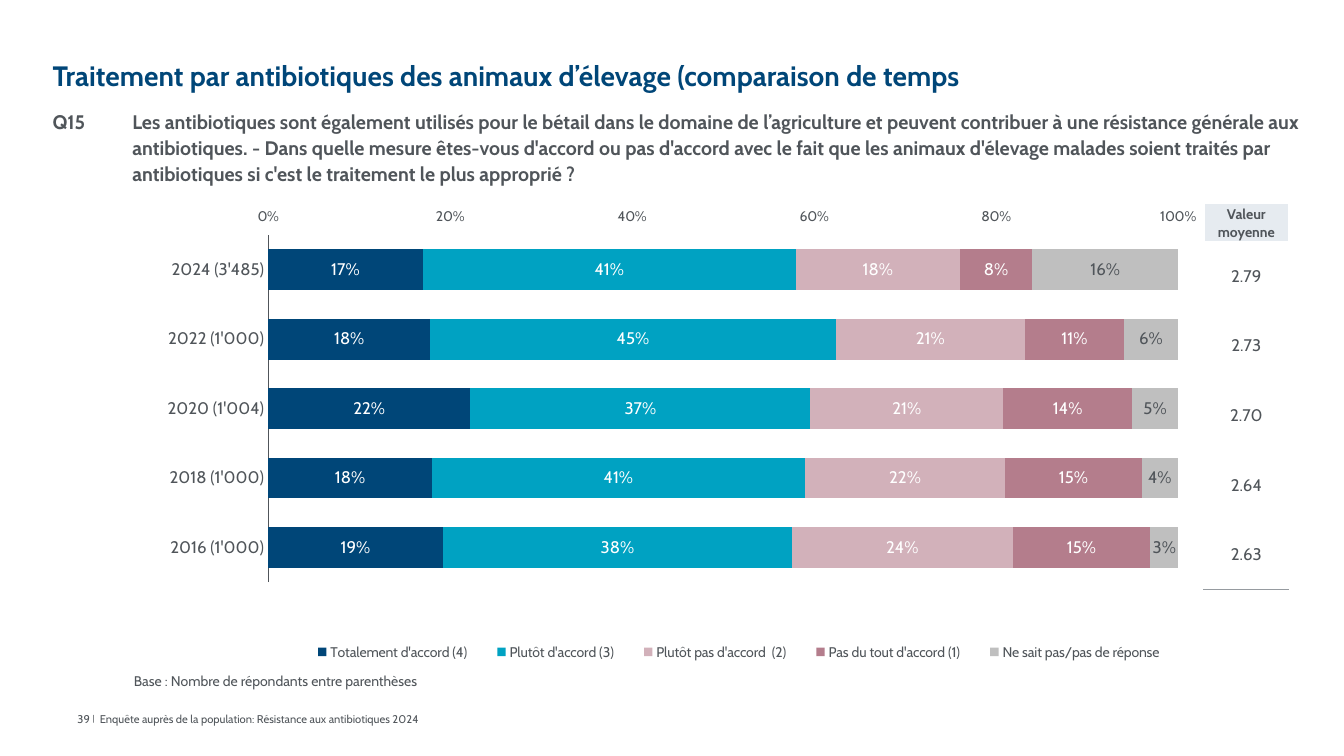
import pptx
import pptx.chart.data
import pptx.dml.color
import pptx.enum.chart
import pptx.enum.text
import pptx.oxml
import pptx.oxml.ns
import pptx.util

Pt = pptx.util.Pt
RGBColor = pptx.dml.color.RGBColor
Align = pptx.enum.text.PP_ALIGN
Anchor = pptx.enum.text.MSO_ANCHOR
ChartKind = pptx.enum.chart

NAVY = RGBColor(0x00, 0x46, 0x78)
CYAN = RGBColor(0x00, 0xA2, 0xC2)
ROSE = RGBColor(0xD2, 0xB1, 0xBA)
MAUVE = RGBColor(0xB4, 0x7D, 0x8C)
SILVER = RGBColor(0xBF, 0xBF, 0xBF)
RULE = RGBColor(0x96, 0x9B, 0xA0)
PALE = RGBColor(0xE6, 0xEB, 0xF0)
TEXT = RGBColor(0x50, 0x55, 0x5A)
WHITE = RGBColor(0xFF, 0xFF, 0xFF)

QUESTION = (
    "Q15\tLes antibiotiques sont également utilisés pour le bétail dans le domaine de "
    "l’agriculture et peuvent contribuer à une résistance générale aux antibiotiques. - "
    "Dans quelle mesure êtes-vous d'accord ou pas d'accord avec le fait que les animaux "
    "d'élevage malades soient traités par antibiotiques si c'est le traitement le plus "
    "approprié ?"
)
YEARS = ["2024 (3'485)", "2022 (1'000)", "2020 (1'004)", "2018 (1'000)", "2016 (1'000)"]
ANSWERS = [
    ("Totalement d'accord (4)", (0.17, 0.18, 0.22, 0.18, 0.19), NAVY, WHITE),
    ("Plutôt d'accord (3)", (0.41, 0.45, 0.37, 0.41, 0.38), CYAN, WHITE),
    ("Plutôt pas d'accord  (2)", (0.18, 0.21, 0.21, 0.22, 0.24), ROSE, WHITE),
    ("Pas du tout d'accord (1)", (0.08, 0.11, 0.14, 0.15, 0.15), MAUVE, WHITE),
    ("Ne sait pas/pas de réponse", (0.16, 0.06, 0.05, 0.04, 0.03), SILVER, TEXT),
]
MEANS = ["2.79", "2.73", "2.70", "2.64", "2.63"]


def make(xml):
    """Build an XML element whose prefixes are a (drawing) or c (chart)."""
    head, tail = xml.split(">", 1)
    slash = "/" if head.endswith("/") else ""
    names = pptx.oxml.ns.nsdecls("a", "c")
    return pptx.oxml.parse_xml(f"{head.rstrip('/')} {names}{slash}>{tail}")


class Page:
    def __init__(self, deck, font="Cabin", color=TEXT):
        self.slide = deck.slides.add_slide(deck.slide_layouts[1])
        self.font = font
        self.color = color

    def style(self, font, size, color=None, bold=False):
        font.name = self.font
        font.size = Pt(size)
        font.bold = bold
        font.color.rgb = color or self.color

    def set_text(self, frame, text, size=10, color=None, bold=False, align=Align.LEFT,
                 spacing=1.0, hanging=0):
        """Fill the first paragraph of a text frame and return it."""
        para = frame.paragraphs[0]
        para.alignment = align
        para.line_spacing = spacing
        para.space_before = Pt(0)
        properties = para._p.get_or_add_pPr()
        properties.set("marL", str(Pt(hanging)))
        properties.set("indent", str(-Pt(hanging)))
        properties.append(make("<a:buNone/>"))
        span = para.add_run()
        span.text = text
        self.style(span.font, size, color, bold)
        return para

    def fill_box(self, box, place, text, anchor=Anchor.TOP, **look):
        box.left, box.top, box.width, box.height = map(Pt, place)
        frame = box.text_frame
        frame.word_wrap = True
        frame.auto_size = pptx.enum.text.MSO_AUTO_SIZE.NONE
        frame.vertical_anchor = anchor
        frame.margin_left = frame.margin_top = frame.margin_right = frame.margin_bottom = 0
        return self.set_text(frame, text, **look)

    def title(self, place, text, **look):
        self.fill_box(self.slide.shapes.title, place, text, **look)

    def body(self, place, text, **look):
        self.fill_box(self.slide.placeholders[1], place, text, **look)

    def text(self, place, text, **look):
        box = self.slide.shapes.add_textbox(*map(Pt, place))
        return self.fill_box(box, place, text, **look)

    def chart(self, place, categories, answers):
        data = pptx.chart.data.CategoryChartData(number_format="0%")
        data.categories = categories
        for name, values, _, _ in answers:
            data.add_series(name, values)
        chart = self.slide.shapes.add_chart(
            ChartKind.XL_CHART_TYPE.BAR_STACKED_100, *map(Pt, place), data).chart
        self.style(chart.font, 14)
        chart.has_title = False

        plot = chart.plots[0]
        plot.gap_width, plot.overlap, plot.vary_by_categories = 70, 100, False
        for series, (_, _, color, label_color) in zip(plot.series, answers):
            series.format.fill.solid()
            series.format.fill.fore_color.rgb = color
            labels = series.data_labels
            labels.show_value = True
            labels.number_format, labels.number_format_is_linked = "0%", False
            labels.position = ChartKind.XL_LABEL_POSITION.CENTER
            self.style(labels.font, 12, label_color)

        years = chart.category_axis
        years.reverse_order = True
        years.crosses = ChartKind.XL_AXIS_CROSSES.MAXIMUM
        years.major_tick_mark = ChartKind.XL_TICK_MARK.NONE
        years.format.line.color.rgb = self.color
        years.format.line.width = Pt(0.5)
        self.style(years.tick_labels.font, 12)

        shares = chart.value_axis
        shares.minimum_scale, shares.maximum_scale, shares.major_unit = 0, 1, 0.2
        shares.has_major_gridlines = False
        shares.format.line.fill.background()
        shares.tick_labels.number_format = "0%"
        shares.tick_labels.number_format_is_linked = False
        self.style(shares.tick_labels.font, 10)

        chart.has_legend = True
        chart.legend.position = ChartKind.XL_LEGEND_POSITION.BOTTOM
        chart.legend.include_in_layout = False
        self.style(chart.legend.font, 10)
        self.lay_out(chart._chartSpace.chart.plotArea, (0.119, 0.098, 0.785, 0.718), True)
        self.lay_out(chart.legend._element, (0.14, 0.93, 0.77, 0.06))

    def lay_out(self, element, area, inner=False):
        """Place a chart part by fractions of the chart's size."""
        for old in element.findall(pptx.oxml.ns.qn("c:layout")):
            element.remove(old)
        target = '<c:layoutTarget val="inner"/>' if inner else ""
        modes = '<c:xMode val="edge"/><c:yMode val="edge"/>'
        sizes = "".join(f'<c:{key} val="{value}"/>' for key, value in zip("xywh", area))
        layout = make("<c:layout><c:manualLayout>"
                      f"{target}{modes}{sizes}</c:manualLayout></c:layout>")
        element.insert(0 if inner else 1, layout)

    def table(self, place, header, values, header_height, row_height):
        table = self.slide.shapes.add_table(len(values) + 1, 1, *map(Pt, place)).table
        table.first_row = table.horz_banding = False
        for index, value in enumerate([header] + values):
            is_header = index == 0
            table.rows[index].height = Pt(header_height if is_header else row_height)
            cell = table.cell(index, 0)
            cell.vertical_anchor = Anchor.MIDDLE
            cell.margin_left = cell.margin_right = cell.margin_top = cell.margin_bottom = 0
            self.set_text(cell.text_frame, value, size=10 if is_header else 12,
                          bold=is_header, align=Align.CENTER,
                          spacing=1.1 if is_header else 1.0)
            if is_header:
                cell.fill.solid()
                cell.fill.fore_color.rgb = PALE
            else:
                is_last = index == len(values)
                self.underline(cell, RULE if is_last else SILVER, 0.5 if is_last else 1)
                cell.fill.background()

    def underline(self, cell, color, width):
        cell._tc.get_or_add_tcPr().insert(0, make(
            f'<a:lnB w="{Pt(width)}"><a:solidFill><a:srgbClr val="{color}"/>'
            "</a:solidFill></a:lnB>"))


def main():
    deck = pptx.Presentation()
    deck.slide_width, deck.slide_height = Pt(960), Pt(540)
    page = Page(deck)
    page.title((37.5, 21, 885, 45),
               "Traitement par antibiotiques des animaux d’élevage (comparaison de temps",
               anchor=Anchor.BOTTOM, size=20, color=NAVY, bold=True, spacing=0.9)
    page.body((37.5, 77, 896, 34), QUESTION, size=14, bold=True, spacing=1.1, hanging=57)
    number = page.text((37.5, 507, 30, 11.5), "39 ", anchor=Anchor.BOTTOM, size=8,
                       align=Align.RIGHT)
    bar = number.add_run()
    bar.text = "|"
    page.style(bar.font, 10)
    bar.font._element.set("baseline", "10000")
    page.chart((93, 134, 828, 345.5), YEARS, ANSWERS)
    page.table((860, 145.5, 60.5, 275.5), "Valeur moyenne", MEANS, 27, 49.7)
    page.text((71.3, 507, 562, 11.5),
              "Enquête auprès de la population: Résistance aux antibiotiques 2024",
              anchor=Anchor.BOTTOM, size=8)
    page.text((95.7, 479.5, 537, 11.5), "Base : Nombre de répondants entre parenthèses",
              spacing=1.1)
    deck.save("out.pptx")


if __name__ == "__main__":
    main()
